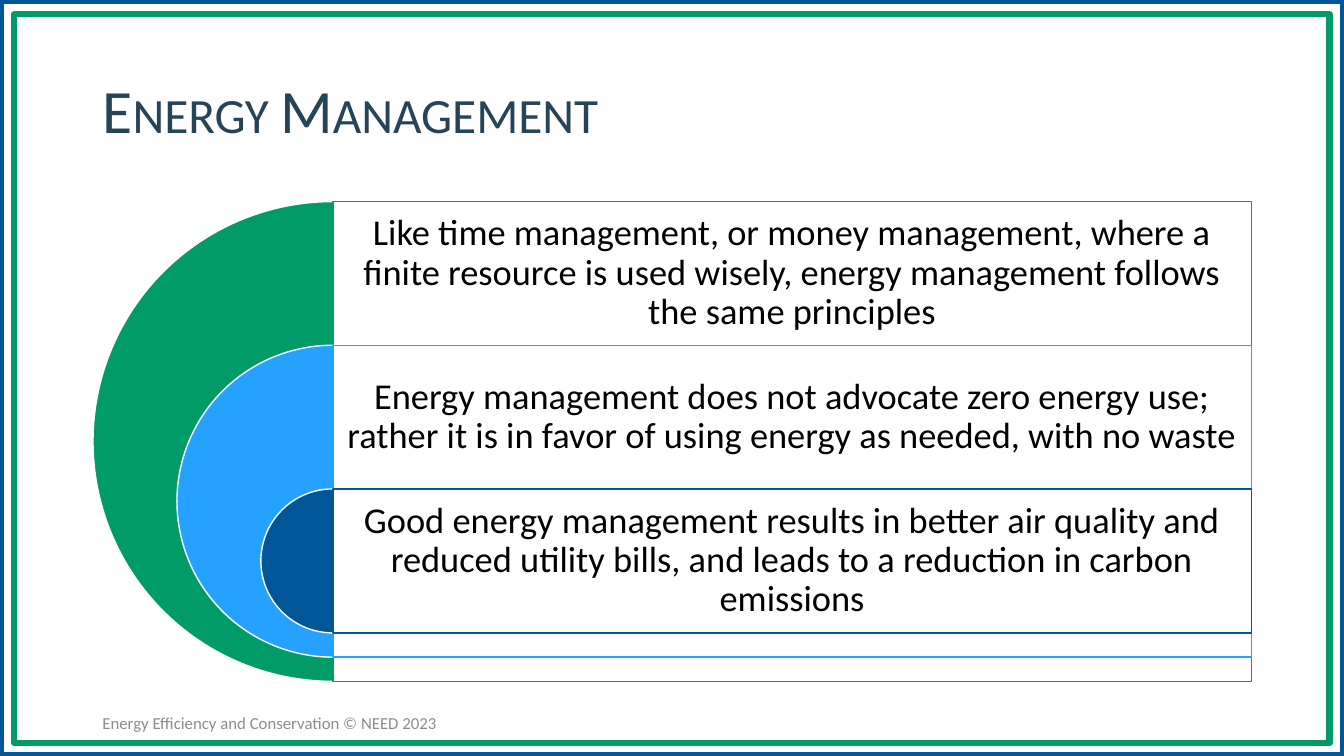
from dataclasses import dataclass

from lxml import etree
from pptx import Presentation
from pptx import util as u
from pptx.dml.color import RGBColor as Rgb
from pptx.enum import shapes, text
from pptx.oxml import ns


@dataclass
class Theme:
    font: str = "Calibri"
    green: str = "009B67"
    sky: str = "25A2FF"
    navy: str = "005699"
    white: str = "FFFFFF"
    ink: str = "264457"
    black: str = "000000"
    gray: str = "8C8C8C"
    head: int = 44
    body: int = 26
    foot: int = 12


theme = Theme()
Kind = shapes.MSO_SHAPE
Align = text.PP_ALIGN


def write(box, words, size, color, align=Align.LEFT, space=1.0, inset=None):
    frame = box.text_frame
    frame.word_wrap = True
    frame.vertical_anchor = text.MSO_ANCHOR.MIDDLE
    if inset is not None:
        frame.margin_left = frame.margin_right = u.Cm(inset)
        frame.margin_top = frame.margin_bottom = u.Cm(inset)
    para = frame.paragraphs[0]
    para.alignment = align
    para.line_spacing = space
    run = para.add_run()
    run.text = words
    run.font.name = theme.font
    run.font.size = u.Pt(size)
    run.font.color.rgb = Rgb.from_string(color)
    return run


def draw(kind, x, y, w, h, line, width, fill=None):
    shape = slide.shapes.add_shape(kind, u.Cm(x), u.Cm(y), u.Cm(w), u.Cm(h))
    shape.shadow.inherit = False
    shape.line.color.rgb = Rgb.from_string(line)
    shape.line.width = u.Pt(width)
    if fill:
        shape.fill.solid()
        shape.fill.fore_color.rgb = Rgb.from_string(fill)
    else:
        shape.fill.background()
    return shape


# Slide
deck = Presentation()
deck.slide_width, deck.slide_height = u.Cm(33.87), u.Cm(19.05)
slide = deck.slides.add_slide(deck.slide_layouts[5])

# Double frame
draw(Kind.RECTANGLE, 0, 0, 33.87, 19.05, theme.navy, 6)
draw(Kind.RECTANGLE, 0.36, 0.36, 33.15, 18.36, theme.green, 4.5)

# Title in small caps
title = slide.shapes.title
title.left, title.top = u.Cm(2.33), u.Cm(1.01)
title.width, title.height = u.Cm(29.21), u.Cm(3.68)
run = write(title, "Energy Management", theme.head, theme.ink, space=0.9)
run.font._element.set("cap", "small")

# Nested half discs, each with its panel and statement
rows = [
    (theme.green, "Like time management, or money management, where a finite "
     "resource is used wisely, energy management follows the same principles"),
    (theme.sky, "Energy management does not advocate zero energy use; rather "
     "it is in favor of using energy as needed, with no waste"),
    (theme.navy, "Good energy management results in better air quality and "
     "reduced utility bills, and leads to a reduction in carbon emissions"),
]
left, top, wide, step = 8.39, 5.08, 23.15, 3.62
for i, (color, words) in enumerate(rows):
    y = top + i * step
    size = 12.09 - i * 4.23
    disc = draw(Kind.PIE, left - size / 2, y, size, size,
                theme.white, 1, color)
    disc.adjustments[0], disc.adjustments[1] = 54, 162
    panel = draw(Kind.RECTANGLE, left, y, wide, size, color, 1, theme.white)
    tint = panel.fill._xPr.find(".//" + ns.qn("a:srgbClr"))
    etree.SubElement(tint, ns.qn("a:alpha"), val="90000")
    box = slide.shapes.add_textbox(u.Cm(left), u.Cm(y), u.Cm(wide), u.Cm(step))
    write(box, words, theme.body, theme.black, Align.CENTER, 0.9, 0.28)

# Footer
foot = slide.shapes.add_textbox(u.Cm(2.33), u.Cm(17.7), u.Cm(17.25), u.Cm(1.02))
write(foot, "Energy Efficiency and Conservation © NEED 2023",
      theme.foot, theme.gray)

deck.save("out.pptx")
